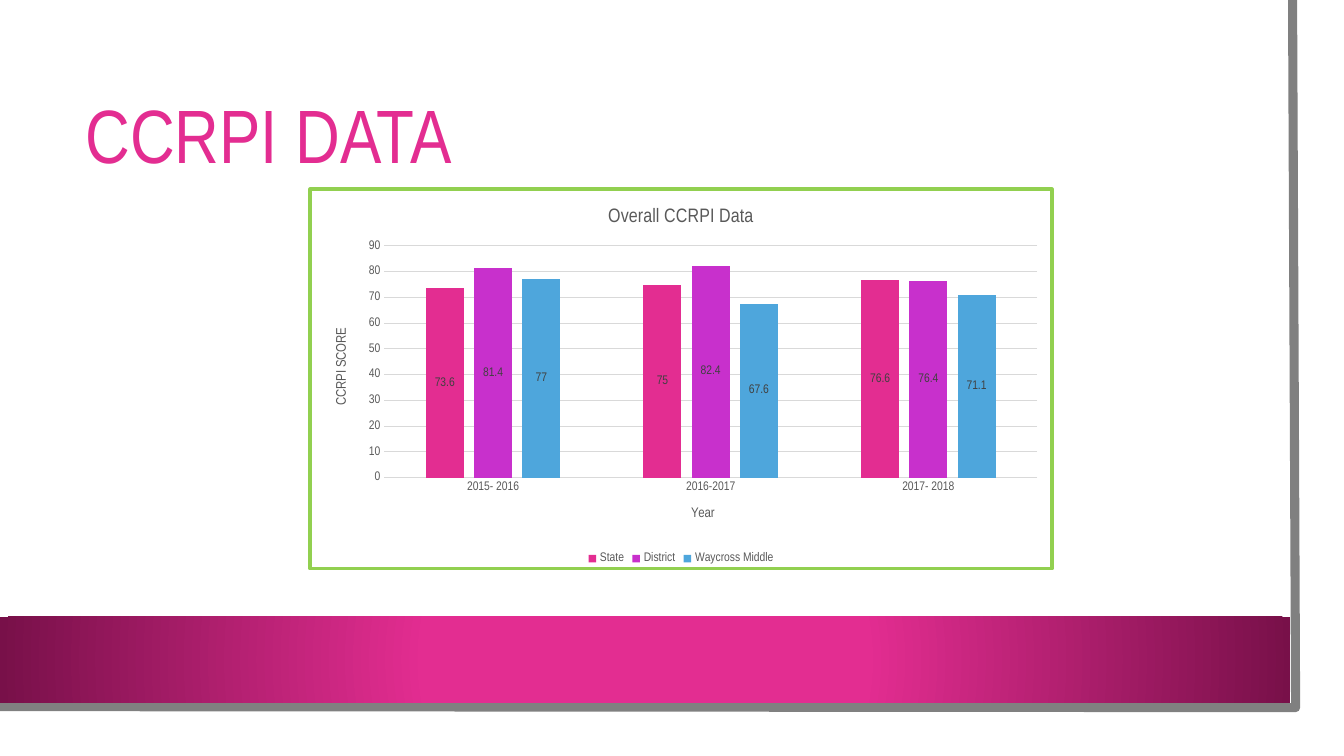
from dataclasses import dataclass

from pptx import Presentation
from pptx import util as u
from pptx.chart.data import CategoryChartData
from pptx.dml.color import RGBColor
from pptx.enum import chart as ch, shapes, text
from pptx.oxml import parse_xml
from pptx.oxml.ns import nsdecls, qn

PINK = RGBColor(0xE3, 0x2D, 0x91)
DARK_PINK = RGBColor(0x78, 0x10, 0x49)
PURPLE = RGBColor(0xC8, 0x30, 0xCC)
BLUE = RGBColor(0x4E, 0xA6, 0xDC)
GREEN = RGBColor(0x92, 0xD0, 0x50)
WHITE = RGBColor(0xFF, 0xFF, 0xFF)
FRAME_GRAY = RGBColor(0x80, 0x80, 0x80)
GRID_GRAY = RGBColor(0xD9, 0xD9, 0xD9)
TEXT_GRAY = RGBColor(0x59, 0x59, 0x59)
LABEL_GRAY = RGBColor(0x40, 0x40, 0x40)
FONT = "Arial Narrow"


@dataclass
class School:
    name: str
    scores: tuple[float, ...]
    color: RGBColor


YEARS = ("2015- 2016", "2016-2017", "2017- 2018")
SCHOOLS = (
    School("State", (73.6, 75, 76.6), PINK),
    School("District", (81.4, 82.4, 76.4), PURPLE),
    School("Waycross Middle", (77, 67.6, 71.1), BLUE),
)


def style_font(font, size: float, color: RGBColor) -> None:
    font.name, font.size, font.bold = FONT, u.Pt(size), False
    font.color.rgb = color


def add_panel(slide, left: float, top: float, width: float, height: float):
    panel = slide.shapes.add_shape(
        shapes.MSO_SHAPE.RECTANGLE, *map(u.Inches, (left, top, width, height)))
    panel.shadow.inherit = False
    panel.line.fill.background()
    return panel


def place(parent, index: int, x: float, y: float, size: tuple[float, ...] = ()) -> None:
    """Give a chart part a fixed place, in fractions of the chart."""
    for old in parent.findall(qn("c:layout")):
        parent.remove(old)
    target = '<c:layoutTarget val="inner"/>' if size else ""
    extent = "".join(f'<c:{k} val="{v}"/>' for k, v in zip("wh", size))
    parent.insert(index, parse_xml(
        f'<c:layout {nsdecls("c")}><c:manualLayout>{target}'
        f'<c:xMode val="edge"/><c:yMode val="edge"/>'
        f'<c:x val="{x}"/><c:y val="{y}"/>{extent}</c:manualLayout></c:layout>'))


def write_title(title, words: str, size: float) -> None:
    title.text_frame.text = words
    style_font(title.text_frame.paragraphs[0].font, size, TEXT_GRAY)


def style_axis(axis, words: str, x: float, y: float) -> None:
    axis.major_tick_mark = axis.minor_tick_mark = ch.XL_TICK_MARK.NONE
    style_font(axis.tick_labels.font, 9, TEXT_GRAY)
    write_title(axis.axis_title, words, 10)
    place(axis.axis_title.element, 1, x, y)


def add_background(slide) -> None:
    page = add_panel(slide, 0, 0, 13.1, 7.27)
    page.fill.solid()
    page.fill.fore_color.rgb = WHITE

    # Gray edge along the right and bottom
    builder = slide.shapes.build_freeform(
        u.Inches(12.82), 0, scale=1.0)
    builder.add_line_segments(
        [(u.Inches(12.85), u.Inches(7.02)), (u.Inches(-0.03), u.Inches(7.01))], close=False)
    edge = builder.convert_to_shape()
    edge.shadow.inherit = False
    edge.fill.background()
    edge.line.color.rgb = FRAME_GRAY
    edge.line.width = u.Pt(6.5)

    # Band with a radial gradient
    band = add_panel(slide, 0, 6.12, 12.8, 0.85)
    band.fill.gradient()
    for stop, position, color in zip(
            band.fill.gradient_stops, (0.34, 1), (PINK, DARK_PINK)):
        stop.position = position
        stop.color.rgb = color
    direction = band.element.find(".//" + qn("a:lin"))
    direction.getparent().replace(direction, parse_xml(
        f'<a:path {nsdecls("a")} path="circle">'
        '<a:fillToRect l="50000" t="50000" r="50000" b="50000"/></a:path>'))


def add_heading(slide) -> None:
    heading = slide.shapes.add_textbox(
        *map(u.Inches, (0.75, 0.75, 11.37, 1.26))).text_frame
    heading.word_wrap = True
    heading.vertical_anchor = text.MSO_ANCHOR.MIDDLE
    heading.text = "CCRPI DATA"
    heading.paragraphs[0].line_spacing = 0.9
    style_font(heading.paragraphs[0].font, 54, PINK)


def add_score_chart(slide) -> None:
    data = CategoryChartData()
    data.categories = YEARS
    for school in SCHOOLS:
        data.add_series(school.name, school.scores)
    chart = slide.shapes.add_chart(
        ch.XL_CHART_TYPE.COLUMN_CLUSTERED,
        *map(u.Inches, (3.06, 1.86, 7.39, 3.8)), data).chart
    chart.font.name, chart.font.size = FONT, u.Pt(10)
    chart.has_title = True
    write_title(chart.chart_title, "Overall CCRPI Data", 14)

    # Green border
    chart.element.find(qn("c:txPr")).addprevious(parse_xml(
        f'<c:spPr {nsdecls("c", "a")}><a:solidFill><a:srgbClr val="{WHITE}"/></a:solidFill>'
        f'<a:ln w="{u.Pt(2.25)}"><a:solidFill><a:srgbClr val="{GREEN}"/></a:solidFill>'
        '</a:ln></c:spPr>'))

    # Axes
    years, scores = chart.category_axis, chart.value_axis
    style_axis(years, "Year", 0.51, 0.83)
    style_axis(scores, "CCRPI SCORE", 0.03, 0.36)
    scores.minimum_scale, scores.maximum_scale, scores.major_unit = 0, 90, 10
    scores.format.line.fill.background()
    for line in (years.format.line, scores.major_gridlines.format.line):
        line.color.rgb = GRID_GRAY
        line.width = u.Pt(0.75)

    # Legend
    chart.has_legend = True
    chart.legend.position = ch.XL_LEGEND_POSITION.BOTTOM
    chart.legend.include_in_layout = False
    style_font(chart.legend.font, 9, TEXT_GRAY)

    # Columns
    columns = chart.plots[0]
    columns.vary_by_categories = False
    columns.gap_width, columns.overlap = 219, -27
    for series, school in zip(columns.series, SCHOOLS):
        series.format.fill.solid()
        series.format.fill.fore_color.rgb = school.color
        labels = series.data_labels
        labels.show_value = True
        labels.position = ch.XL_LABEL_POSITION.CENTER
        style_font(labels.font, 9, LABEL_GRAY)
    place(chart.element.find(".//" + qn("c:plotArea")), 0, 0.1, 0.15, (0.88, 0.61))


def main() -> None:
    deck = Presentation()
    deck.slide_width, deck.slide_height = u.Inches(13.33), u.Inches(7.5)
    slide = deck.slides.add_slide(deck.slide_layouts[6])
    add_background(slide)
    add_heading(slide)
    add_score_chart(slide)
    deck.save("out.pptx")


if __name__ == "__main__":
    main()
